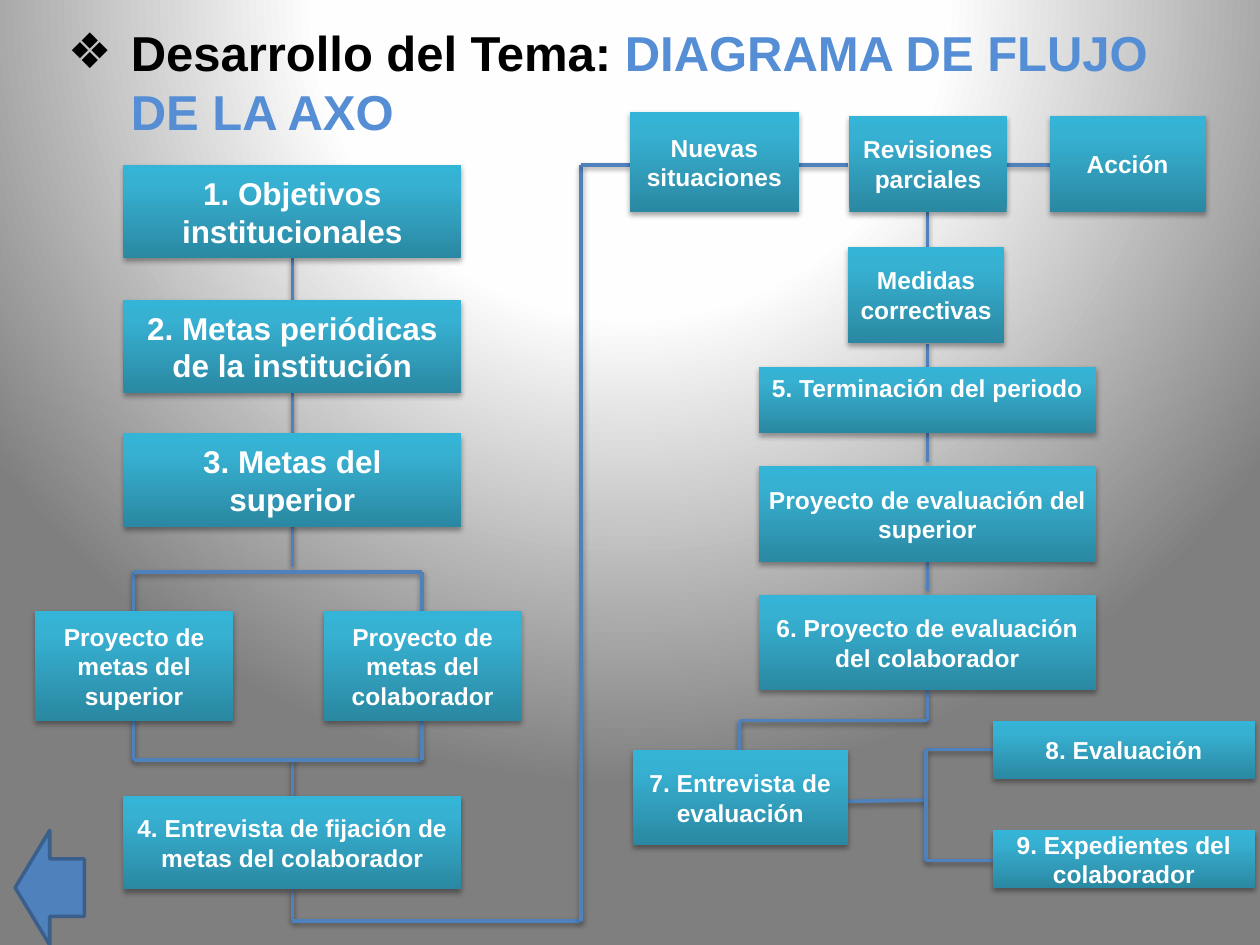
from itertools import pairwise

from pptx import Presentation
from pptx.dml.color import RGBColor
from pptx.enum.shapes import MSO_CONNECTOR, MSO_SHAPE
from pptx.enum.text import MSO_ANCHOR, MSO_AUTO_SIZE, PP_ALIGN
from pptx.oxml import parse_xml
from pptx.oxml.ns import nsdecls, qn
from pptx.util import Inches, Pt

COLORS = {
    "text": "000000",
    "accent": "558ED5",
    "box_text": "FFFFFF",
    "line": "4F81BD",
    "arrow_edge": "3A5F8C",
    "shadow": "000000",
}
BACKGROUND_STOPS = {0: "FFFFFF", 40: "FEFEFE", 100: "7F7F7F"}
BOX_STOPS = {0: "2A88A2", 80: "37B1D2", 100: "34B4D6"}
RADIAL = ('<a:path path="circle"><a:fillToRect l="50000" t="-80000" '
          'r="50000" b="180000"/></a:path>')
UPWARD = '<a:lin ang="16200000" scaled="0"/>'

LEFT_X, RIGHT_X = 0.98, 6.02
LEFT_AXIS, RIGHT_AXIS = 2.32, 7.36
BRANCHES = (1.06, 3.35)
WIDE, TALL, MEDIUM = 2.68, 0.74, 0.76

GOALS = [
    ("1. Objetivos institucionales", 1.31),
    ("2. Metas periódicas de la institución", 2.38),
    ("3. Metas del superior", 3.44),
]
# text, left, top, width, height
STEPS = [
    ("Proyecto de metas del superior", 0.28, 4.85, 1.57, 0.87),
    ("Proyecto de metas del colaborador", 2.57, 4.85, 1.57, 0.87),
    ("4. Entrevista de fijación de metas del colaborador", LEFT_X, 6.32, WIDE, TALL),
    ("Nuevas situaciones", 5, 0.89, 1.34, 0.79),
    ("Revisiones parciales", 6.74, 0.92, 1.25, MEDIUM),
    ("Acción", 8.33, 0.92, 1.24, MEDIUM),
    ("Medidas correctivas", 6.73, 1.96, 1.24, MEDIUM),
    ("Proyecto de evaluación del superior", RIGHT_X, 3.7, WIDE, MEDIUM),
    ("6. Proyecto de evaluación del colaborador", RIGHT_X, 4.72, WIDE, MEDIUM),
    ("7. Entrevista de evaluación", 5.02, 5.95, 1.71, MEDIUM),
    ("8. Evaluación", 7.88, 5.72, 2.08, 0.46),
    ("9. Expedientes del colaborador", 7.88, 6.59, 2.08, 0.46),
]
ROUTES = [
    *[[(LEFT_AXIS, top), (LEFT_AXIS, top + 0.33)] for top in (2.05, 3.12, 4.17, 6.02)],
    [(BRANCHES[0], 4.87), (BRANCHES[0], 4.54), (BRANCHES[1], 4.54), (BRANCHES[1], 4.87)],
    [(BRANCHES[0], 5.7), (BRANCHES[0], 6.03), (BRANCHES[1], 6.03), (BRANCHES[1], 5.72)],
    [(LEFT_AXIS, 7.06), (LEFT_AXIS, 7.31), (4.61, 7.31), (4.61, 1.31), (5, 1.31)],
    [(6.34, 1.31), (6.73, 1.31)],
    [(7.99, 1.31), (8.39, 1.31)],
    *[[(RIGHT_AXIS, top), (RIGHT_AXIS, bottom)]
      for top, bottom in ((1.68, 2.05), (2.73, 2.96), (3.44, 3.67), (4.46, 4.69))],
    [(RIGHT_AXIS, 5.48), (RIGHT_AXIS, 5.72), (5.87, 5.72), (5.87, 5.95)],
    [(6.73, 6.36), (7.35, 6.35)],
    [(7.88, 5.95), (7.35, 5.95), (7.35, 6.83), (7.88, 6.83)],
]


def rgb(name):
    return RGBColor.from_string(COLORS[name])


def paint_gradient(fill, element, stops, direction):
    """Give the fill inside element any number of stops and a direction."""
    fill.gradient()
    default = next(element.iter(qn("a:gradFill")))
    stop_list = "".join(
        f'<a:gs pos="{position * 1000}"><a:srgbClr val="{color}"/></a:gs>'
        for position, color in stops.items())
    default.getparent().replace(default, parse_xml(
        f'<a:gradFill {nsdecls("a")} rotWithShape="1">'
        f'<a:gsLst>{stop_list}</a:gsLst>{direction}</a:gradFill>'))


def add_shadow(item, opacity, distance):
    properties = item._element.spPr
    for effects in properties.findall(qn("a:effectLst")):
        properties.remove(effects)
    properties.append(parse_xml(
        f'<a:effectLst {nsdecls("a")}><a:outerShdw blurRad="{Pt(3.1)}" '
        f'dist="{Pt(distance)}" dir="5400000" rotWithShape="0">'
        f'<a:srgbClr val="{COLORS["shadow"]}"><a:alpha val="{opacity * 1000}"/>'
        '</a:srgbClr></a:outerShdw></a:effectLst>'))


def set_font(font, size, color):
    font.name = "Arial"
    font.size = Pt(size)
    font.bold = True
    font.color.rgb = rgb(color)


def add_title(slide):
    title = slide.shapes.add_textbox(Inches(0.44), Inches(0.13), Inches(9.21), Inches(1.92))
    frame = title.text_frame
    frame.word_wrap = True
    frame.auto_size = MSO_AUTO_SIZE.SHAPE_TO_FIT_TEXT
    paragraph = frame.paragraphs[0]
    for text, color in (("Desarrollo del Tema: ", "text"),
                        ("DIAGRAMA DE FLUJO DE LA AXO", "accent")):
        run = paragraph.add_run()
        run.text = text
        set_font(run.font, 28, color)
    properties = paragraph._p.get_or_add_pPr()
    properties.set("marL", str(Inches(0.5)))
    properties.set("indent", str(Inches(-0.5)))
    properties.append(parse_xml(f'<a:buFont {nsdecls("a")} typeface="Arial"/>'))
    properties.append(parse_xml(f'<a:buChar {nsdecls("a")} char="❖"/>'))


def add_route(slide, points):
    """Join consecutive points with straight connectors."""
    for start, end in pairwise(points):
        connector = slide.shapes.add_connector(
            MSO_CONNECTOR.STRAIGHT, *map(Inches, start + end))
        connector.line.color.rgb = rgb("line")
        connector.line.width = Pt(2)
        add_shadow(connector, 38, 1.6)


def add_step(slide, text, left, top, width, height,
             size=14, margin=0.08, anchor=MSO_ANCHOR.MIDDLE):
    step = slide.shapes.add_shape(
        MSO_SHAPE.RECTANGLE, *map(Inches, (left, top, width, height)))
    paint_gradient(step.fill, step._element.spPr, BOX_STOPS, UPWARD)
    step.line.fill.background()
    add_shadow(step, 35, 1.8)
    frame = step.text_frame
    frame.word_wrap = True
    frame.margin_left = frame.margin_right = Inches(margin)
    frame.vertical_anchor = anchor
    paragraph = frame.paragraphs[0]
    paragraph.text = text
    paragraph.alignment = PP_ALIGN.CENTER
    set_font(paragraph.font, size, "box_text")


def add_back_arrow(slide):
    arrow = slide.shapes.add_shape(
        MSO_SHAPE.LEFT_ARROW, Inches(0.12), Inches(6.59), Inches(0.55), Inches(0.91))
    arrow.shadow.inherit = False
    arrow.fill.solid()
    arrow.fill.fore_color.rgb = rgb("line")
    arrow.line.color.rgb = rgb("arrow_edge")
    arrow.line.width = Pt(2)


def main():
    deck = Presentation()
    deck.slide_width, deck.slide_height = Inches(10), Inches(7.5)
    slide = deck.slides.add_slide(deck.slide_layouts[6])
    paint_gradient(slide.background.fill, slide._element, BACKGROUND_STOPS, RADIAL)
    add_title(slide)
    for points in ROUTES:
        add_route(slide, points)
    for text, top in GOALS:
        add_step(slide, text, LEFT_X, top, WIDE, TALL, size=18, margin=0.15)
    for step in STEPS:
        add_step(slide, *step)
    add_step(slide, "5. Terminación del periodo", RIGHT_X, 2.91, WIDE, 0.53,
             anchor=MSO_ANCHOR.TOP)
    add_back_arrow(slide)
    deck.save("out.pptx")


if __name__ == "__main__":
    main()
